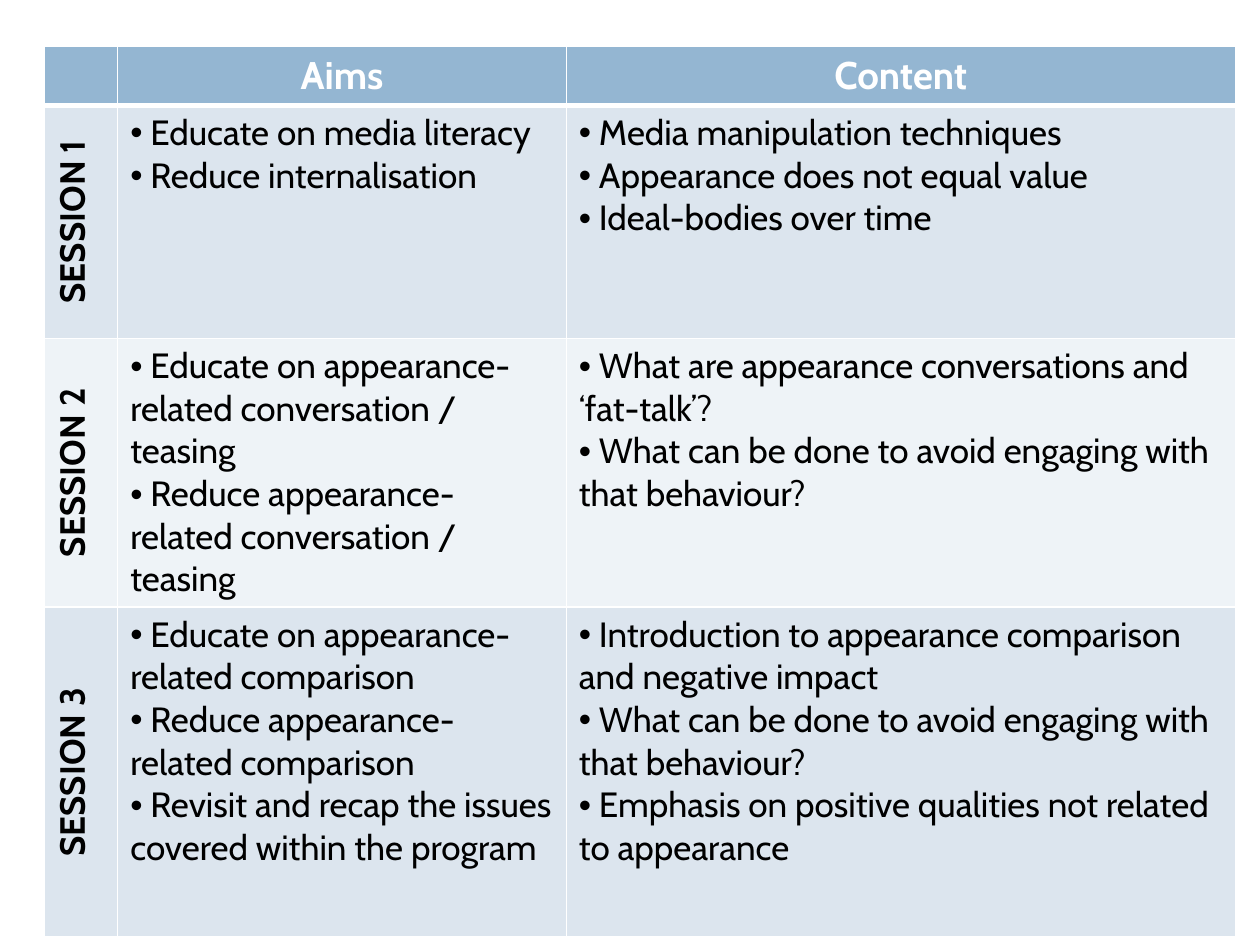
from lxml import etree
from pptx import Presentation
from pptx.dml.color import RGBColor
from pptx.enum.text import PP_ALIGN
from pptx.oxml.ns import qn
from pptx.util import Pt

CENTER, LEFT = PP_ALIGN.CENTER, PP_ALIGN.LEFT
FONT = "Cabin"
WHITE, BLACK = "FFFFFF", "000000"
HEADER_FILL = "94B6D2"
BAND_FILLS = ("DCE5EE", "EEF3F7")

COLUMN_WIDTHS = (41.76, 256.32, 382.32)
ROW_HEIGHTS = (33.12, 133.2, 127.44, 188.64)
HEADINGS = ("", "Aims", "Content")
SESSIONS = (
    ("SESSION 1",
     ("Educate on media literacy", "Reduce internalisation"),
     ("Media manipulation techniques",
      "Appearance does not equal value",
      "Ideal-bodies over time")),
    ("SESSION 2",
     ("Educate on appearance-related conversation / teasing",
      "Reduce appearance-related conversation / teasing"),
     ("What are appearance conversations and ‘fat-talk’?",
      "What can be done to avoid engaging with that behaviour?")),
    ("SESSION 3",
     ("Educate on appearance-related comparison",
      "Reduce appearance-related comparison",
      "Revisit and recap the issues covered within the program"),
     ("Introduction to appearance comparison and negative impact",
      "What can be done to avoid engaging with that behaviour?",
      "Emphasis on positive qualities not related to appearance")),
)


def color(value):
    return RGBColor.from_string(value)


def add_bullet(paragraph):
    properties = paragraph._p.get_or_add_pPr()
    properties.set("marL", "0")
    properties.set("indent", "0")
    etree.SubElement(properties, qn("a:buFont"), typeface="Arial")
    etree.SubElement(properties, qn("a:buChar"), char="•")


def write_text(paragraph, text, size=20, fill=BLACK, bold=False, align=LEFT):
    paragraph.alignment = align
    run = paragraph.add_run()
    run.text = text
    run.font.name = FONT
    run.font.size = Pt(size)
    run.font.bold = bold
    run.font.color.rgb = color(fill)


def format_cell(cell, fill, top=1, bottom=1):
    """Give the cell its fill and white borders; widths are in points."""
    properties = cell._tc.get_or_add_tcPr()
    for side, width in (("L", 1), ("R", 1), ("T", top), ("B", bottom)):
        line = etree.SubElement(properties, qn(f"a:ln{side}"), w=str(Pt(width)))
        solid = etree.SubElement(line, qn("a:solidFill"))
        etree.SubElement(solid, qn("a:srgbClr"), val=WHITE)
    cell.fill.solid()
    cell.fill.fore_color.rgb = color(fill)


def fill_header(cells):
    for cell, heading in zip(cells, HEADINGS):
        format_cell(cell, HEADER_FILL, bottom=3)
        if heading:
            write_text(cell.text_frame.paragraphs[0], heading, size=22,
                       fill=WHITE, bold=True, align=CENTER)


def fill_session(cells, session, fill, top):
    name, *bullet_lists = session
    name_cell, *list_cells = cells
    for cell in cells:
        format_cell(cell, fill, top=top)
    name_cell._tc.get_or_add_tcPr().set("vert", "vert270")
    write_text(name_cell.text_frame.paragraphs[0], name, bold=True, align=CENTER)
    for cell, bullets in zip(list_cells, bullet_lists):
        frame = cell.text_frame
        for index, bullet in enumerate(bullets):
            paragraph = frame.add_paragraph() if index else frame.paragraphs[0]
            add_bullet(paragraph)
            write_text(paragraph, f" {bullet}")


def add_session_table(slide, left, top, width, height):
    table = slide.shapes.add_table(
        len(ROW_HEIGHTS), len(COLUMN_WIDTHS),
        Pt(left), Pt(top), Pt(width), Pt(height)).table
    for column, column_width in zip(table.columns, COLUMN_WIDTHS):
        column.width = Pt(column_width)
    for row, row_height in zip(table.rows, ROW_HEIGHTS):
        row.height = Pt(row_height)
    header, *session_rows = table.rows
    fill_header(list(header.cells))
    for index, (row, session) in enumerate(zip(session_rows, SESSIONS)):
        fill_session(list(row.cells), session, BAND_FILLS[index % 2],
                     top=1 if index else 3)


def main():
    presentation = Presentation()
    presentation.slide_width = Pt(720)
    presentation.slide_height = Pt(540)
    slide = presentation.slides.add_slide(presentation.slide_layouts[6])
    add_session_table(slide, 25.5, 26.2, sum(COLUMN_WIDTHS), sum(ROW_HEIGHTS))
    presentation.save("out.pptx")


if __name__ == "__main__":
    main()
